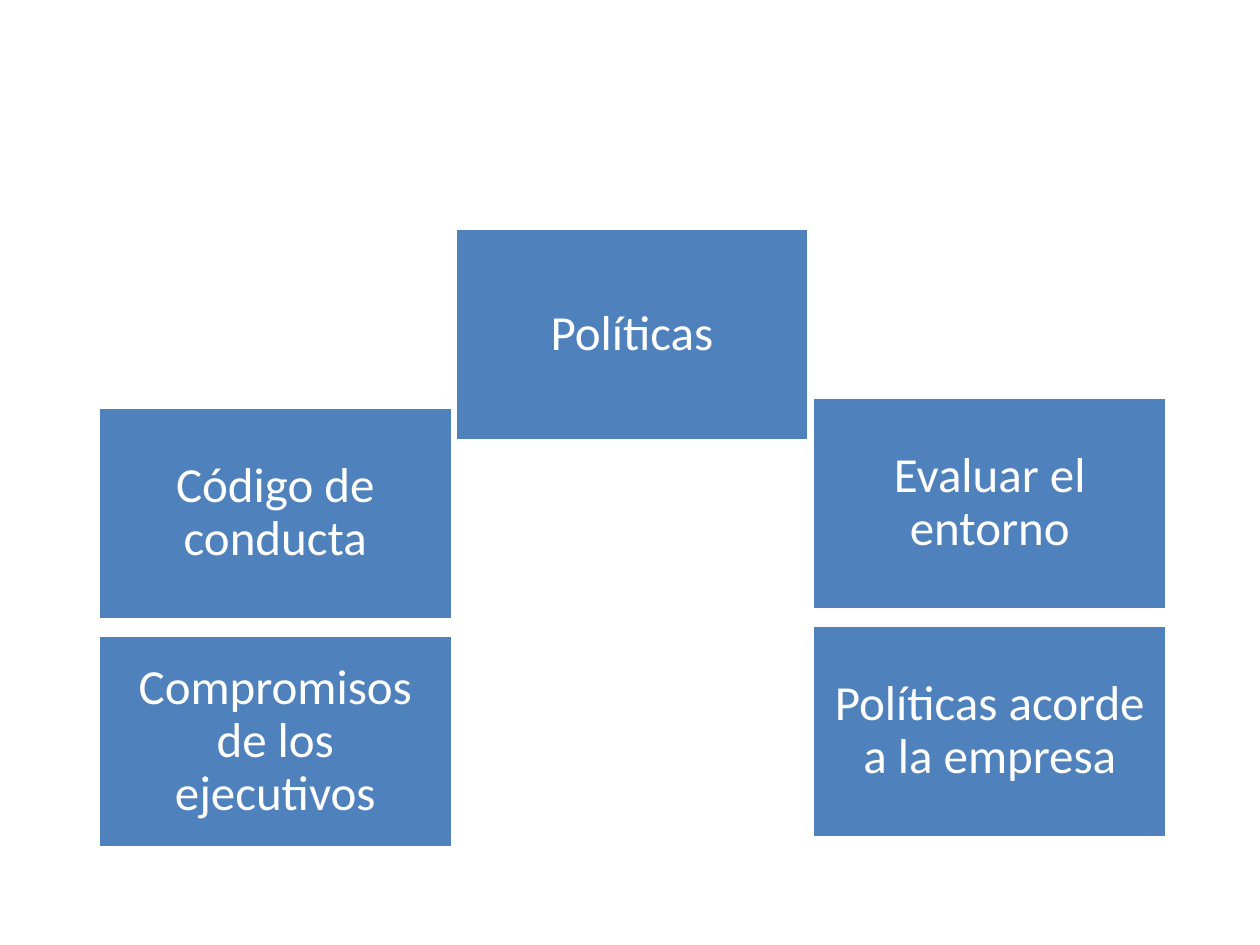
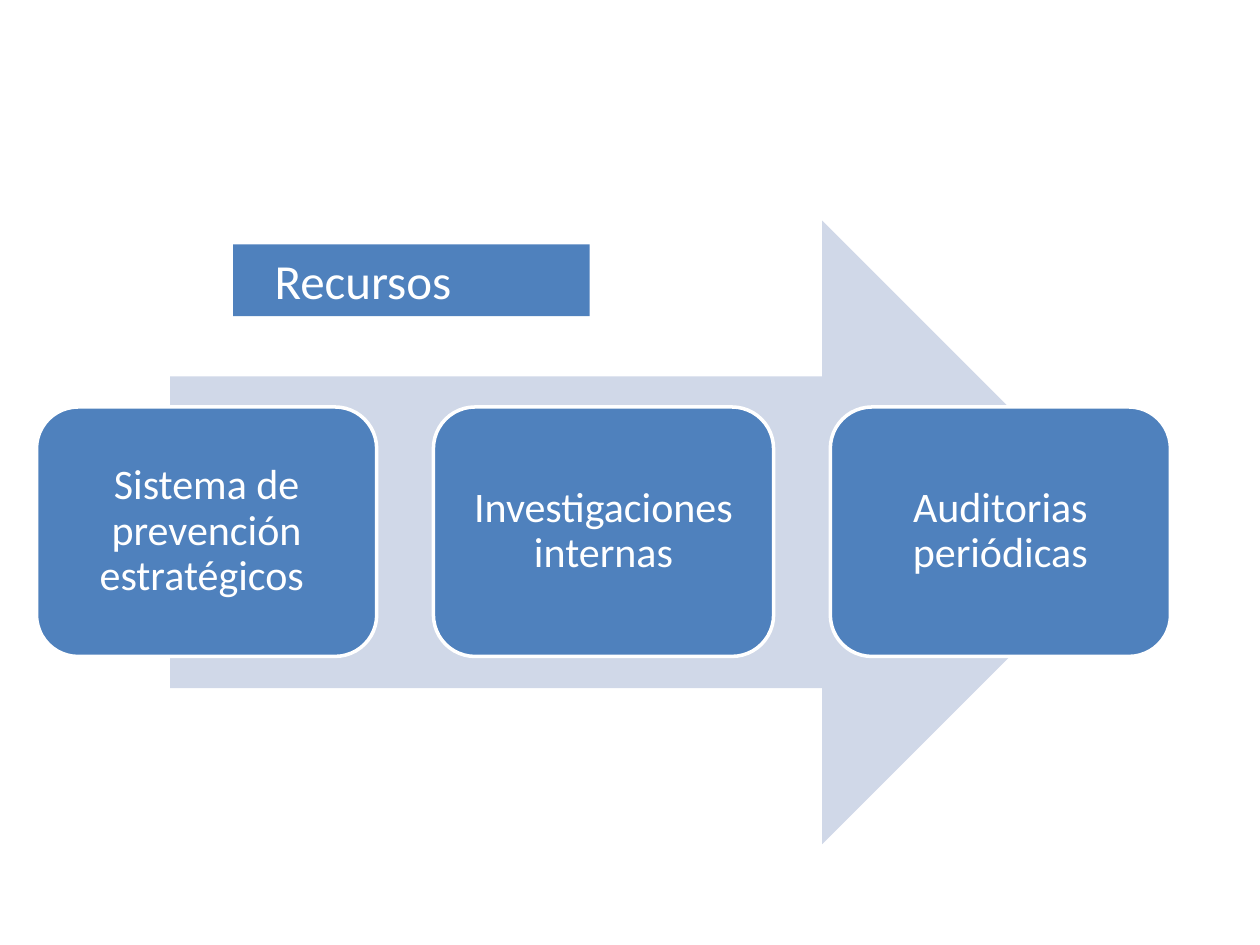
from pptx import Presentation
from pptx.dml.color import RGBColor
from pptx.enum.shapes import MSO_SHAPE
from pptx.enum.text import MSO_ANCHOR, PP_ALIGN
from pptx.util import Inches, Pt

COLORS = {"box": "4F81BD", "arrow": "D0D8E8", "white": "FFFFFF"}
FONT = "Calibri"


def add_block(s, kind, box, fill="box", outlined=True):
    """Add a flat filled shape; box is left, top, width, height in inches."""
    sp = s.shapes.add_shape(kind, *(Inches(v) for v in box))
    sp.shadow.inherit = False
    sp.fill.solid()
    sp.fill.fore_color.rgb = RGBColor.from_string(COLORS[fill])
    if outlined:
        sp.line.color.rgb = RGBColor.from_string(COLORS["white"])
        sp.line.width = Pt(2)
    else:
        sp.line.fill.background()
    return sp


def add_label(sp, text, size, inset, align=PP_ALIGN.CENTER, spacing=0.9):
    tf = sp.text_frame
    margins = dict.fromkeys(("margin_left", "margin_top", "margin_right", "margin_bottom"), Inches(inset))
    for name, value in {**margins, "word_wrap": True, "vertical_anchor": MSO_ANCHOR.MIDDLE}.items():
        setattr(tf, name, value)
    p = tf.paragraphs[0]
    p.alignment = align
    p.line_spacing = spacing
    r = p.add_run()
    r.text = text
    for name, value in {"name": FONT, "size": Pt(size)}.items():
        setattr(r.font, name, value)
    r.font.color.rgb = RGBColor.from_string(COLORS["white"])


prs = Presentation()
prs.slide_width, prs.slide_height = Inches(10), Inches(7.5)
blank = prs.slide_layouts[6]

# Slide 1: policies, three columns of boxes
s = prs.slides.add_slide(blank)
box_w, box_h, row_step = 2.81, 1.69, 1.81
columns = [
    (0.78, 3.23, ["Código de conducta", "Compromisos de los ejecutivos"]),
    (3.61, 1.81, ["Políticas"]),
    (6.45, 3.15, ["Evaluar el entorno", "Políticas acorde a la empresa"]),
]
for left, top, labels in columns:
    for row, label in enumerate(labels):
        sp = add_block(s, MSO_SHAPE.RECTANGLE, (left, top + row * row_step, box_w, box_h))
        add_label(sp, label, 28, 0.12)

# Slide 2: resources, three steps along an arrow
s = prs.slides.add_slide(blank)
add_block(s, MSO_SHAPE.RIGHT_ARROW, (1.35, 1.75, 7.65, 4.95), "arrow", outlined=False)
steps = ["Sistema de prevención estratégicos ", "Investigaciones internas", "Auditorias periódicas"]
for i, step in enumerate(steps):
    sp = add_block(s, MSO_SHAPE.ROUNDED_RECTANGLE, (0.29 + i * 3.15, 3.23, 2.7, 1.98))
    add_label(sp, step, 24, 0.1)

heading = add_block(s, MSO_SHAPE.RECTANGLE, (1.85, 1.94, 2.83, 0.57), outlined=False)
add_label(heading, "Recursos", 28, 0.05, PP_ALIGN.LEFT, 1.0)
heading.text_frame.margin_left = Inches(0.33)

prs.save("out.pptx")
